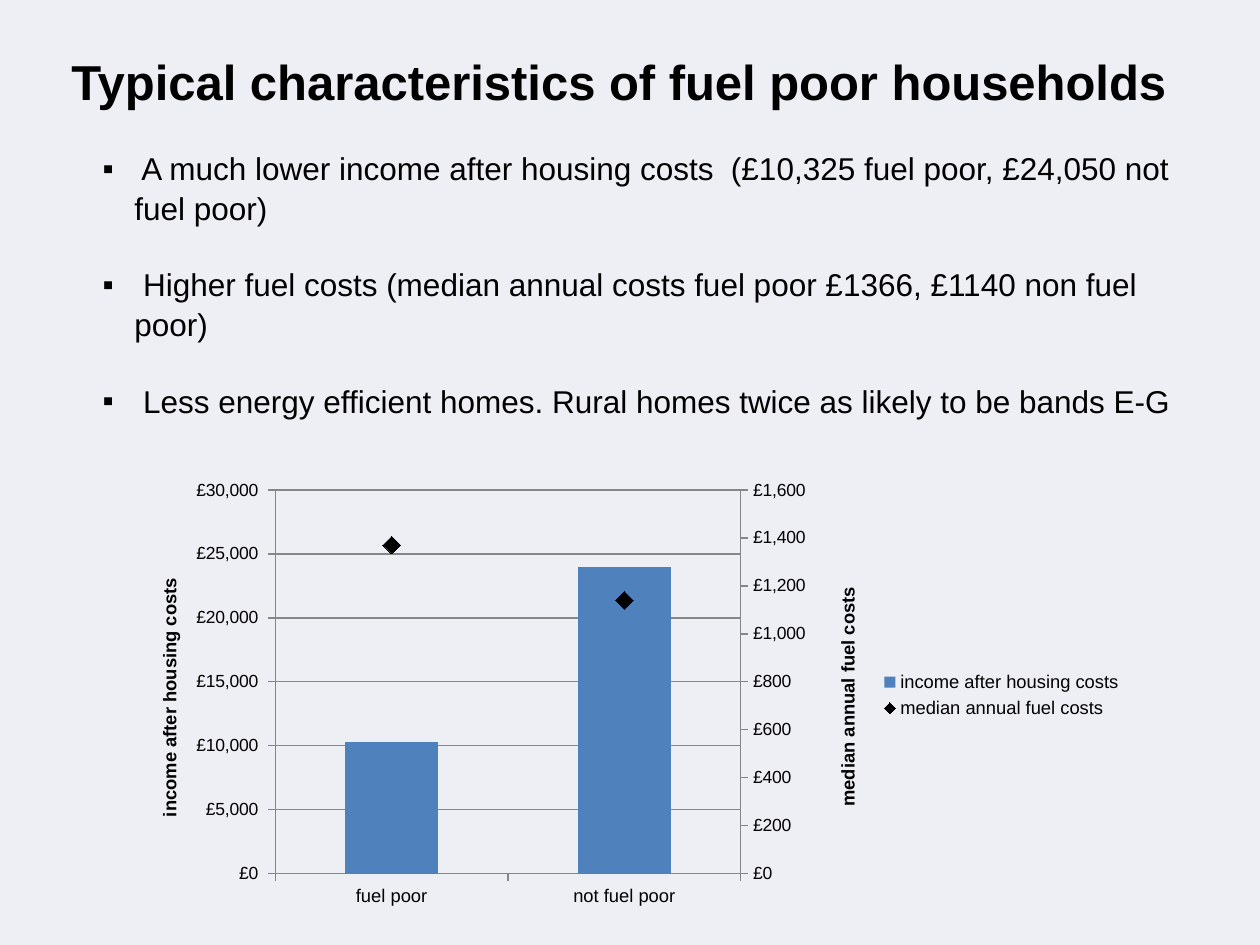
from copy import deepcopy

from pptx import Presentation
from pptx.chart.data import CategoryChartData
from pptx.dml.color import RGBColor
from pptx.enum.chart import XL_CHART_TYPE, XL_LEGEND_POSITION, XL_MARKER_STYLE, XL_TICK_MARK
from pptx.oxml import parse_xml
from pptx.oxml.ns import nsdecls, qn
from pptx.util import Cm, Pt

BACKGROUND = RGBColor(0xEE, 0xEF, 0xF4)
BLACK = RGBColor(0, 0, 0)
BLUE = RGBColor(0x4F, 0x81, 0xBD)
GREY = RGBColor(0x86, 0x86, 0x86)

INCOME = "income after housing costs"
FUEL = "median annual fuel costs"
BULLETS = [
    " A much lower income after housing costs  (£10,325 fuel poor, £24,050 not fuel poor)",
    " Higher fuel costs (median annual costs fuel poor £1366, £1140 non fuel poor)",
    " Less energy efficient homes. Rural homes twice as likely to be bands E-G",
]


def set_font(font, **values):
    values = {"name": "Arial", "bold": False, **values}
    for key, value in values.items():
        setattr(font, key, value)
    font.color.rgb = BLACK


def place(element, index, **fractions):
    """Fix a chart part's position, as fractions of the chart's size."""
    for old in element.findall(qn("c:layout")):
        element.remove(old)
    target = '<c:layoutTarget val="inner"/>' if "w" in fractions else ""
    modes = "".join(f'<c:{k}Mode val="edge"/>' for k in "xy")
    sizes = "".join(f'<c:{k} val="{v}"/>' for k, v in fractions.items())
    element.insert(index, parse_xml(
        f'<c:layout {nsdecls("c")}><c:manualLayout>{target}{modes}{sizes}'
        "</c:manualLayout></c:layout>"))


prs = Presentation()
prs.slide_width, prs.slide_height = Cm(25.4), Cm(19.05)
s = prs.slides.add_slide(prs.slide_layouts[6])
s.background.fill.solid()
s.background.fill.fore_color.rgb = BACKGROUND

# Title and bullets
tf = s.shapes.add_textbox(Cm(1.19), Cm(0.91), Cm(23.01), Cm(8.38)).text_frame
tf.word_wrap = True
r = tf.paragraphs[0].add_run()
r.text = "Typical characteristics of fuel poor households"
set_font(r.font, size=Pt(28), bold=True)
for text in BULLETS:
    p = tf.add_paragraph()
    p.level = 1
    p.space_before = Pt(21.5)
    p.line_spacing = 1.04
    pPr = p._p.get_or_add_pPr()
    pPr.set("marL", str(Cm(1.27)))
    pPr.set("indent", str(-Cm(0.64)))
    for bullet in ('a:buFont {} typeface="Arial"', 'a:buChar {} char="▪"'):
        pPr.append(parse_xml(f"<{bullet.format(nsdecls('a'))}/>"))
    r = p.add_run()
    r.text = text
    set_font(r.font, size=Pt(18))

# Column chart
data = CategoryChartData()
data.categories = ["fuel poor", "not fuel poor"]
data.add_series(INCOME, [10300, 24000])
data.add_series(FUEL, [1370, 1140])
chart = s.shapes.add_chart(XL_CHART_TYPE.COLUMN_CLUSTERED, Cm(2.49), Cm(9.52),
                           Cm(20.4), Cm(8.99), data).chart
set_font(chart.font, size=Pt(10), name="Calibri")
chart.has_title = False
chart.has_legend = True
chart.legend.position = XL_LEGEND_POSITION.RIGHT
chart.legend.include_in_layout = False
set_font(chart.legend.font, size=Pt(10.5))

for axis, size in ((chart.category_axis, 10.5), (chart.value_axis, 10)):
    axis.major_tick_mark = XL_TICK_MARK.OUTSIDE
    axis.minor_tick_mark = XL_TICK_MARK.NONE
    axis.format.line.color.rgb = GREY
    axis.format.line.width = Pt(0.75)
    set_font(axis.tick_labels.font, size=Pt(size))

axis = chart.value_axis
axis.minimum_scale, axis.maximum_scale, axis.major_unit = 0, 30000, 5000
axis.major_gridlines.format.line.color.rgb = GREY
axis.major_gridlines.format.line.width = Pt(0.75)
axis.tick_labels.number_format = r'"£"#,##0_);[Red]\("£"#,##0\)'
axis.tick_labels.number_format_is_linked = False
title_tf = axis.axis_title.text_frame
r = title_tf.paragraphs[0].add_run()
r.text = INCOME
set_font(r.font, size=Pt(10.5), bold=True)
title_tf._txBody.bodyPr.set("rot", "-5400000")
title_tf._txBody.bodyPr.set("vert", "horz")

plot = chart.plots[0]
plot.vary_by_categories = False
plot.gap_width = 150
fill = plot.series[0].format.fill
fill.solid()
fill.fore_color.rgb = BLUE

# Fuel costs become markers on a second pair of axes
area = chart._chartSpace.chart.plotArea
bar = area.find(qn("c:barChart"))
fuel_ser = bar.findall(qn("c:ser"))[1]
for flag in fuel_ser.findall(qn("c:invertIfNegative")):
    fuel_ser.remove(flag)
line = parse_xml(
    f'<c:lineChart {nsdecls("c")}><c:grouping val="standard"/><c:varyColors val="0"/>'
    '<c:marker val="1"/><c:axId val="5001"/><c:axId val="5002"/></c:lineChart>')
line.insert(2, fuel_ser)
bar.addnext(line)

left_axis = area.find(qn("c:valAx"))
right_axis = deepcopy(left_axis)
hidden_axis = deepcopy(area.find(qn("c:catAx")))
left_axis.addnext(right_axis)
right_axis.addnext(hidden_axis)
for ax, own, other in ((hidden_axis, "5001", "5002"), (right_axis, "5002", "5001")):
    ax.find(qn("c:axId")).set("val", own)
    ax.find(qn("c:crossAx")).set("val", other)
hidden_axis.find(qn("c:delete")).set("val", "1")
right_axis.remove(right_axis.find(qn("c:majorGridlines")))
for tag, value in (("axPos", "r"), ("crosses", "max"), ("majorUnit", "200")):
    right_axis.find(qn(f"c:{tag}")).set("val", value)
right_axis.find(qn("c:scaling")).find(qn("c:max")).set("val", "1600")
right_title = right_axis.find(qn("c:title"))
next(right_title.iter(qn("a:t"))).text = FUEL

fuel = chart.plots[1].series[0]
fuel.smooth = False
fuel.format.line.fill.background()
fuel.marker.style = XL_MARKER_STYLE.DIAMOND
fuel.marker.size = 10
fuel.marker.format.fill.solid()
fuel.marker.format.fill.fore_color.rgb = BLACK
fuel.marker.format.line.color.rgb = BLACK

place(area, 0, x=0.15, y=0.04, w=0.46, h=0.86)
place(left_axis.find(qn("c:title")), 1, x=0.03, y=0.23)
place(right_title, 1, x=0.7, y=0.25)

prs.save("out.pptx")
